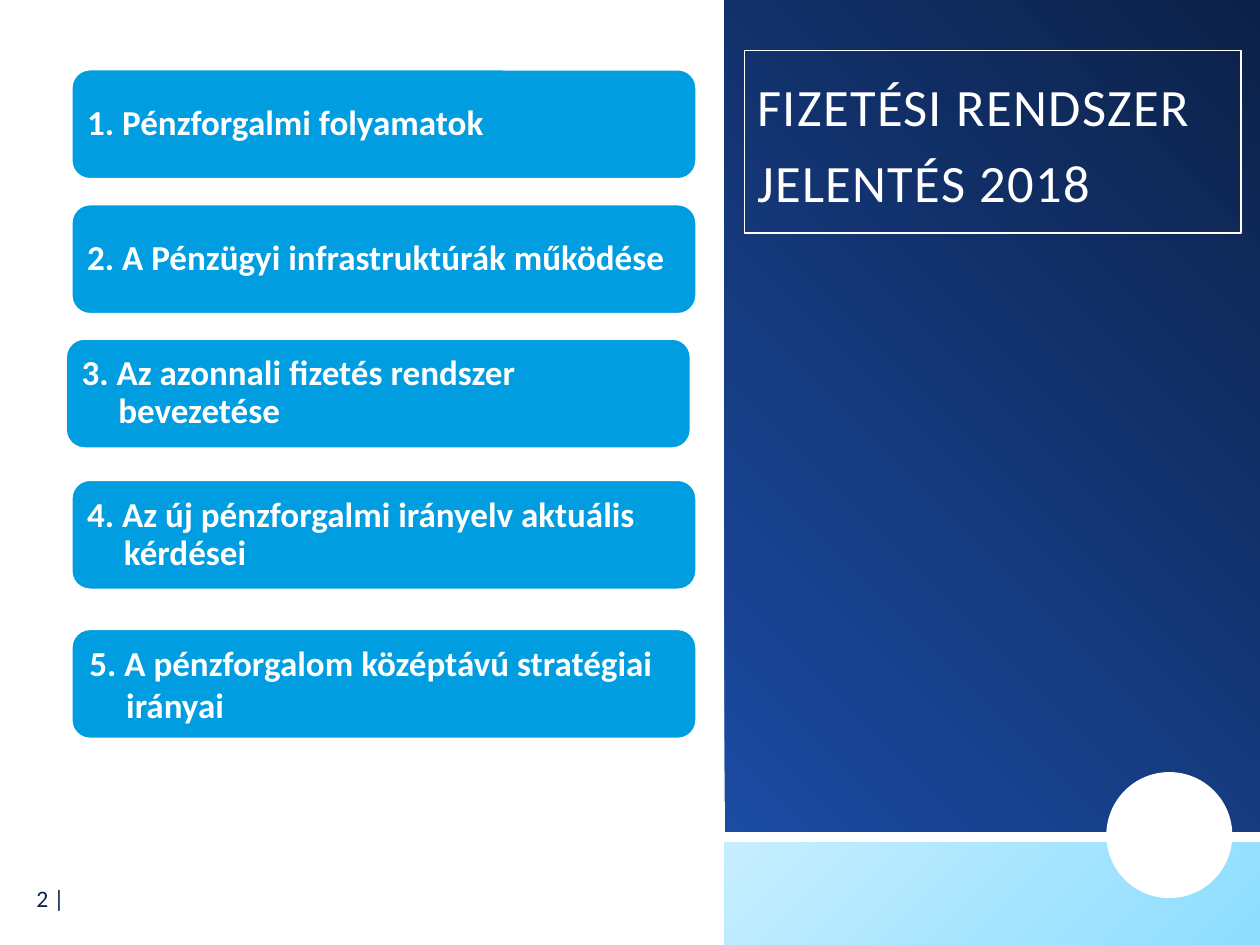
from pptx import Presentation
from pptx.dml.color import RGBColor
from pptx.enum.shapes import MSO_SHAPE
from pptx.enum.text import MSO_ANCHOR, MSO_AUTO_SIZE, PP_ALIGN
from pptx.util import Pt

WHITE = RGBColor(0xFF, 0xFF, 0xFF)
NAVY = RGBColor(0x0C, 0x21, 0x48)
ROYAL = RGBColor(0x1B, 0x4B, 0xA3)
SKY = RGBColor(0x8D, 0xDD, 0xFF)
PALE = RGBColor(0xC6, 0xEE, 0xFF)
CYAN = RGBColor(0x00, 0x9E, 0xE0)


def add_plain_shape(page, kind, left, top, width, height):
    shape = page.shapes.add_shape(kind, Pt(left), Pt(top), Pt(width), Pt(height))
    shape.shadow.inherit = False
    shape.line.fill.background()
    return shape


def add_span(para, text, size, color, bold=False):
    span = para.add_run()
    span.text = text
    span.font.name = "Calibri"
    span.font.size = Pt(size)
    span.font.bold = bold
    span.font.color.rgb = color
    return span


deck = Presentation()
deck.slide_width, deck.slide_height = Pt(720), Pt(540)
page = deck.slides.add_slide(deck.slide_layouts[5])

# Page number
number_box = page.shapes.add_textbox(Pt(0.7), Pt(499.7), Pt(43.2), Pt(26.6))
number_box.text_frame.word_wrap = True
number_box.text_frame.vertical_anchor = MSO_ANCHOR.MIDDLE
para = number_box.text_frame.paragraphs[0]
para.alignment = PP_ALIGN.RIGHT
add_span(para, "2 |", 13.5, NAVY)

# Gradient panels on the right: top, height, angle, start and end colours
panels = [
    (-0.7, 476, 45, ROYAL, NAVY),
    (481.7, 58.3, 135, SKY, PALE),
]
for top, height, angle, start, end in panels:
    panel = add_plain_shape(page, MSO_SHAPE.RECTANGLE, 414, top, 306, height)
    panel.fill.gradient()
    panel.fill.gradient_angle = angle
    for stop, color in zip(panel.fill.gradient_stops, (start, end)):
        stop.color.rgb = color

# White disc over the panels
disc = add_plain_shape(page, MSO_SHAPE.OVAL, 632.2, 441.2, 72, 72)
disc.fill.solid()
disc.fill.fore_color.rgb = WHITE

# Title, brought in front of the panels
title = page.shapes.title
page.shapes._spTree.append(title._element)
title.left, title.top, title.width, title.height = Pt(425.5), Pt(28.8), Pt(283.7), Pt(104.4)
title.line.color.rgb = WHITE
title.line.width = Pt(0.75)
frame = title.text_frame
frame.word_wrap = True
frame.auto_size = MSO_AUTO_SIZE.NONE
frame.vertical_anchor = MSO_ANCHOR.BOTTOM
frame.margin_left = frame.margin_right = Pt(7.2)
frame.margin_top, frame.margin_bottom = Pt(3.6), Pt(11.5)
para = frame.paragraphs[0]
para.alignment = PP_ALIGN.LEFT
para.line_spacing = 1.2
span = add_span(para, "FIZETÉSI RENDSZER JELENTÉS 2018", 30, WHITE)
span._r.get_or_add_rPr().set("spc", "80")

# Agenda cards: left, top, side margin, line spacing, text
cards = [
    (41, 39.8, 5.8, 0.9, "1. Pénzforgalmi folyamatok"),
    (41, 116.9, 5.8, 0.9, "2. A Pénzügyi infrastruktúrák működése"),
    (37.8, 193.7, 5.8, 0.9, "3. Az azonnali fizetés rendszer bevezetése"),
    (41, 274.4, 5.8, 0.9, "4. Az új pénzforgalmi irányelv aktuális kérdései"),
    (41, 359.6, 7.2, 1.0, "5. A pénzforgalom középtávú stratégiai irányai"),
]
for left, top, margin, spacing, text in cards:
    card = add_plain_shape(page, MSO_SHAPE.ROUNDED_RECTANGLE, left, top, 356.8, 62.4)
    card.fill.solid()
    card.fill.fore_color.rgb = CYAN
    card.line.color.rgb = WHITE
    card.line.width = Pt(1)
    frame = card.text_frame
    frame.word_wrap = True
    frame.vertical_anchor = MSO_ANCHOR.MIDDLE
    frame.margin_left = frame.margin_right = Pt(margin)
    frame.margin_top = frame.margin_bottom = Pt(3.6)
    para = frame.paragraphs[0]
    para.alignment = PP_ALIGN.LEFT
    para.line_spacing = spacing
    # Hanging indent for the wrapped line
    indent = para._p.get_or_add_pPr()
    indent.set("marL", str(Pt(21)))
    indent.set("indent", str(-Pt(21)))
    add_span(para, text, 20, WHITE, bold=True)

deck.save("out.pptx")
